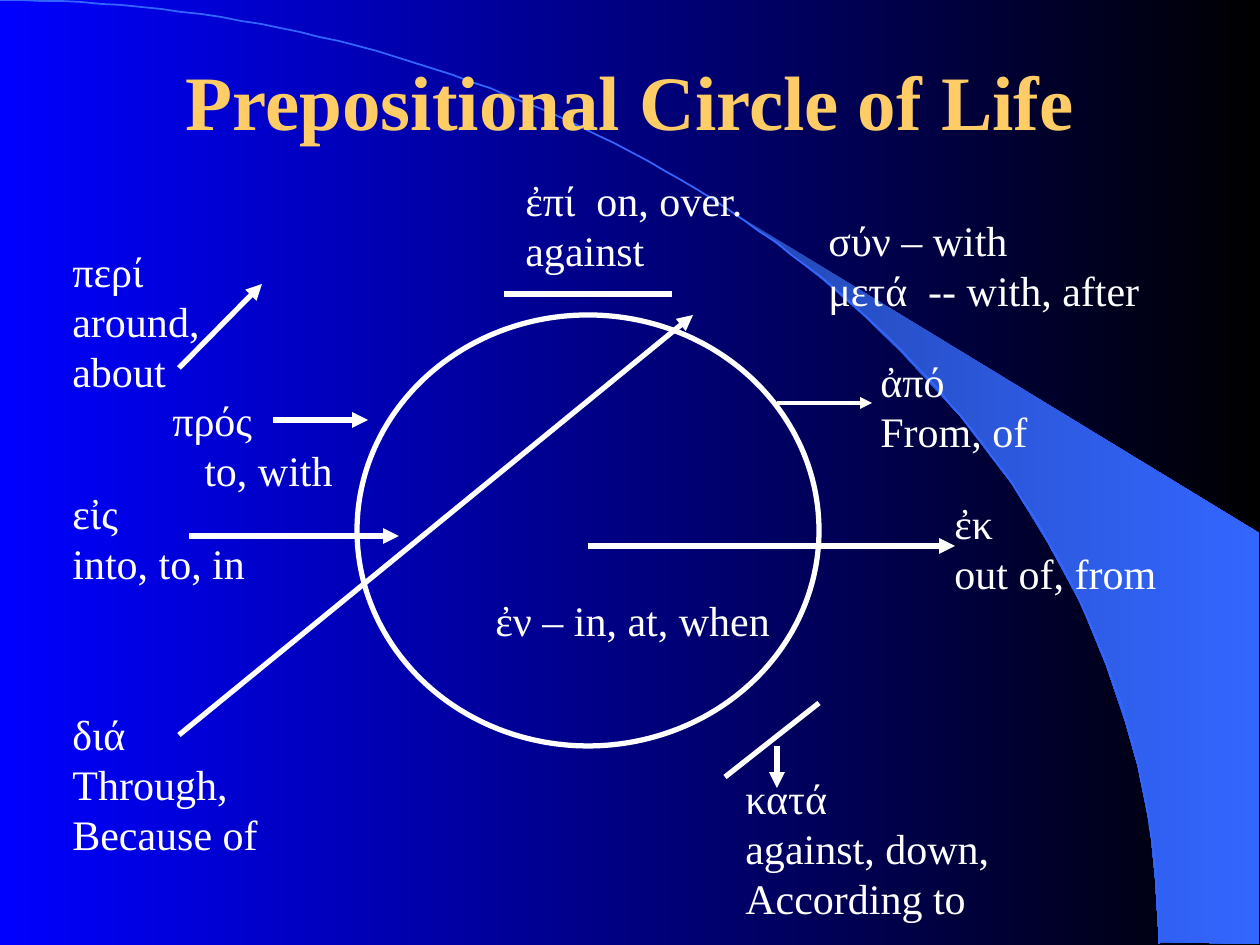
import math

import lxml.etree
import pptx
import pptx.dml.color
import pptx.enum.shapes
import pptx.enum.text
import pptx.oxml.ns
import pptx.util

RGBColor = pptx.dml.color.RGBColor
BLUE = RGBColor(0x00, 0x00, 0xFF)
BLACK = RGBColor(0x00, 0x00, 0x00)
DEEP_BLUE = RGBColor(0x24, 0x49, 0xB6)
BRIGHT_BLUE = RGBColor(0x33, 0x66, 0xFF)
GOLD = RGBColor(0xFF, 0xCC, 0x66)
WHITE = RGBColor(0xFF, 0xFF, 0xFF)
FONT = "Times New Roman"
EMU_PER_PX = 914400 / 126


def px(n):
    return pptx.util.Emu(round(n * EMU_PER_PX))


class Diagram:
    def __init__(self, s):
        self.s = s

    def gradient(self, fill, start, end):
        fill.gradient()
        fill.gradient_angle = 0
        for stop, color in zip(fill.gradient_stops, (start, end)):
            stop.color.rgb = color

    def outline(self, sp, color, width):
        sp.line.color.rgb = color
        sp.line.width = pptx.util.Pt(width)

    def freeform(self, points, close):
        builder = self.s.shapes.build_freeform(*points[0], scale=EMU_PER_PX)
        builder.add_line_segments(points[1:], close=close)
        sp = builder.convert_to_shape()
        sp.shadow.inherit = False
        return sp

    def wedge(self, points):
        sp = self.freeform(points, True)
        self.gradient(sp.fill, DEEP_BLUE, BRIGHT_BLUE)
        sp.line.fill.background()

    def arc(self, rx, ry, steps=90):
        angles = [math.pi / 2 * i / steps for i in range(steps + 1)]
        points = [(round(rx * math.sin(a)), round(ry * (1 - math.cos(a)))) for a in angles]
        sp = self.freeform(points, False)
        sp.fill.background()
        self.outline(sp, BRIGHT_BLUE, 1)

    def circle(self, x, y, w, h):
        oval = pptx.enum.shapes.MSO_SHAPE.OVAL
        sp = self.s.shapes.add_shape(oval, px(x), px(y), px(w), px(h))
        sp.shadow.inherit = False
        sp.fill.background()
        self.outline(sp, WHITE, 3)

    def line(self, x1, y1, x2, y2, width=3, arrow=True):
        straight = pptx.enum.shapes.MSO_CONNECTOR.STRAIGHT
        sp = self.s.shapes.add_connector(straight, px(x1), px(y1), px(x2), px(y2))
        self.outline(sp, WHITE, width)
        if arrow:
            ln = sp.line._get_or_add_ln()
            lxml.etree.SubElement(ln, pptx.oxml.ns.qn("a:tailEnd"), type="triangle")
        lxml.etree.SubElement(sp._element.spPr, pptx.oxml.ns.qn("a:effectLst"))

    def run(self, p, text, size, color, bold=False):
        r = p.add_run()
        r.text = text
        r.font.name = FONT
        r.font.size = pptx.util.Pt(size)
        r.font.bold = bold
        r.font.color.rgb = color

    def title(self, x, y, w, h, text):
        tf = self.s.shapes.add_textbox(px(x), px(y), px(w), px(h)).text_frame
        tf.word_wrap = True
        tf.vertical_anchor = pptx.enum.text.MSO_ANCHOR.MIDDLE
        p = tf.paragraphs[0]
        p.alignment = pptx.enum.text.PP_ALIGN.CENTER
        self.run(p, text, 44, GOLD, True)

    def label(self, x, y, w, h, lines, indent=0):
        tf = self.s.shapes.add_textbox(px(x), px(y), px(w), px(h)).text_frame
        tf.word_wrap = False
        tf.auto_size = pptx.enum.text.MSO_AUTO_SIZE.SHAPE_TO_FIT_TEXT
        for i, text in enumerate(lines):
            p = tf.add_paragraph() if i else tf.paragraphs[0]
            if i and indent:
                p._p.get_or_add_pPr().set("marL", str(px(indent)))
            self.run(p, text, 24, WHITE)


WEDGE = [
    (1159, 942), (1259, 944), (1259, 533), (742, 218), (786, 251), (823, 280),
    (863, 315), (902, 353), (960, 416), (1012, 484), (1048, 543), (1081, 604),
    (1106, 665), (1125, 721), (1138, 767), (1150, 827), (1155, 877),
]
ARROWS = [
    (179, 368, 262, 284),
    (588, 546, 955, 546),
    (777, 746, 777, 788),
    (179, 735, 693, 315),
    (189, 536, 399, 536),
    (273, 420, 368, 420),
]
BARS = [(504, 294, 672, 294), (819, 703, 725, 777)]
LABELS = [
    (60, 239, 154, 165, ["περί", "around,", "about"]),
    (513, 168, 244, 115, ["ἐπί  on, over.", "against"]),
    (60, 481, 199, 115, ["εἰς", "into, to, in"]),
    (60, 702, 213, 165, ["διά", "Through,", "Because of"]),
    (733, 766, 271, 165, ["κατά", "against, down,", "According to"]),
    (483, 588, 302, 63, ["ἐν – in, at, when"]),
    (942, 491, 229, 115, ["ἐκ", "out of, from"]),
    (868, 349, 174, 115, ["ἀπό", "From, of"]),
    (816, 208, 339, 115, ["σύν – with", "μετά  -- with, after"]),
]


def main():
    prs = pptx.Presentation()
    prs.slide_width, prs.slide_height = px(1260), px(945)
    s = prs.slides.add_slide(prs.slide_layouts[6])
    d = Diagram(s)
    d.gradient(s.background.fill, BLUE, BLACK)
    d.wedge(WEDGE)
    d.arc(1159, 944)
    d.title(95, 21, 1071, 158, "Prepositional Circle of Life")
    d.circle(357, 315, 462, 431)
    for ends in ARROWS:
        d.line(*ends)
    d.line(777, 403, 872, 403, width=2.25)
    for ends in BARS:
        d.line(*ends, arrow=False)
    for label in LABELS:
        d.label(*label)
    d.label(160, 388, 186, 115, ["πρός", "to, with"], indent=32)
    prs.save("out.pptx")


if __name__ == "__main__":
    main()
